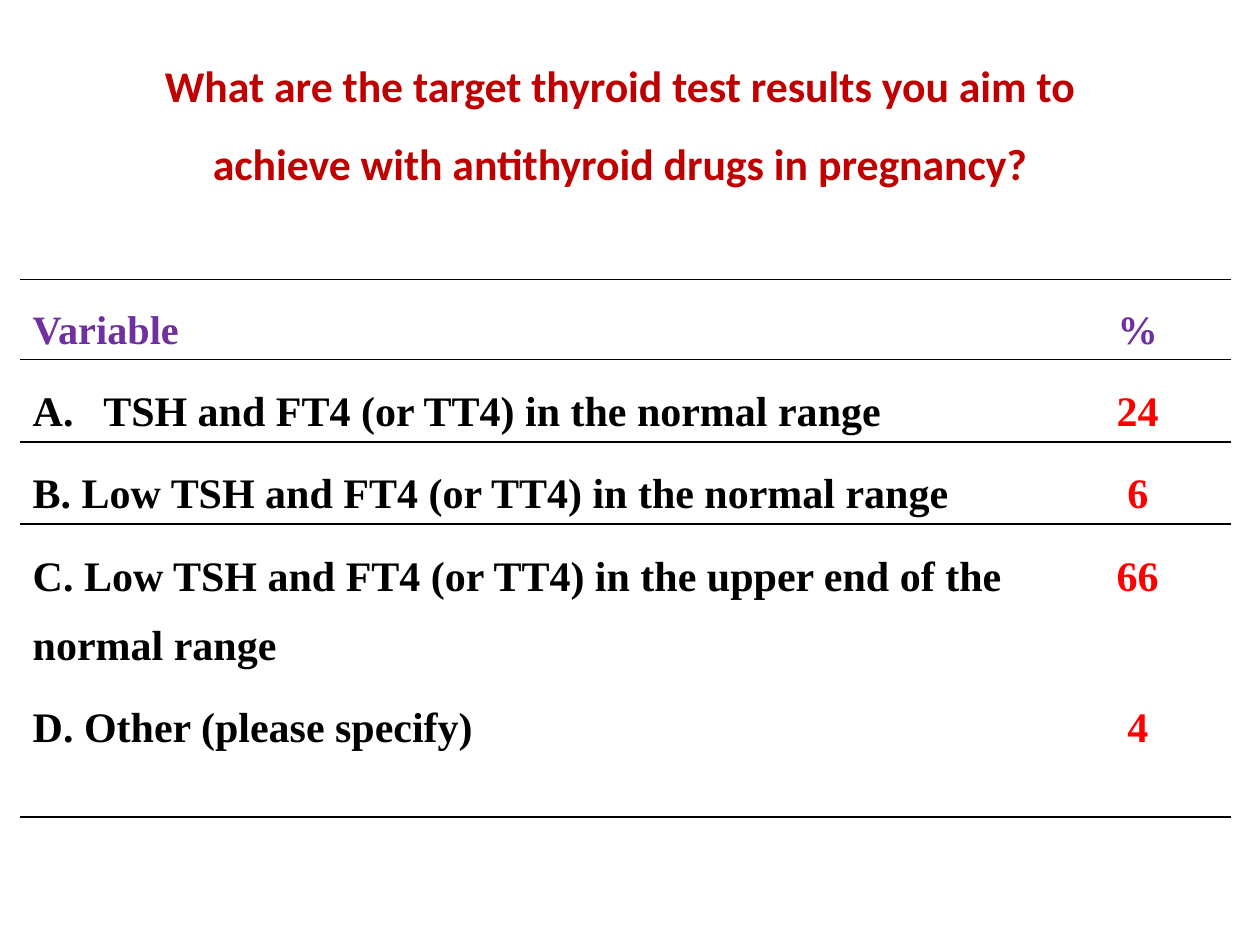
from lxml import etree
from pptx import Presentation
from pptx.dml.color import RGBColor
from pptx.enum.text import MSO_ANCHOR, PP_ALIGN
from pptx.oxml.ns import qn
from pptx.util import Inches, Pt

DARK_RED = RGBColor(0xC0, 0x00, 0x00)
PURPLE = RGBColor(0x70, 0x30, 0xA0)
RED = RGBColor(0xFF, 0x00, 0x00)
BLACK = RGBColor(0x00, 0x00, 0x00)
NO_GRID_STYLE = "{2D5ABB26-0587-4C30-8999-92F81FD0307C}"


def format_paragraph(p, font_name, size, color, align):
    p.alignment = align
    p.line_spacing = 1.5
    for r in p.runs:
        r.font.name = font_name
        r.font.size = Pt(size)
        r.font.bold = True
        r.font.color.rgb = color


def add_border(cell, tag):
    """Rule one side of a cell; tag is a:lnT or a:lnB."""
    ln = etree.SubElement(cell._tc.get_or_add_tcPr(), qn(tag), w=str(Pt(1)))
    fill = etree.SubElement(ln, qn("a:solidFill"))
    etree.SubElement(fill, qn("a:srgbClr"), val=str(BLACK))


prs = Presentation()
prs.slide_width, prs.slide_height = Inches(10), Inches(7.5)
s = prs.slides.add_slide(prs.slide_layouts[6])

# Answer table
rows = [
    ("Variable", "%"),
    ("TSH and FT4 (or TT4) in the normal range", "24"),
    ("B. Low TSH and FT4 (or TT4) in the normal range", "6"),
    ("C. Low TSH and FT4 (or TT4) in the upper end of the normal range", "66"),
    ("D. Other (please specify)", "4"),
]
row_heights = [0.61, 0.63, 0.63, 0.62, 1.12]
ruled_below = (0, 1, 4)

table = s.shapes.add_table(len(rows), 2, Inches(0.16), Inches(2.22),
                           Inches(9.61), Inches(sum(row_heights))).table
table._tbl.tblPr.find(qn("a:tableStyleId")).text = NO_GRID_STYLE
table.first_row = table.horz_banding = False
for column, width in zip(table.columns, (8.13, 1.48)):
    column.width = Inches(width)

for i, (texts, height) in enumerate(zip(rows, row_heights)):
    table.rows[i].height = Inches(height)
    for j, text in enumerate(texts):
        cell = table.cell(i, j)
        if i == 0 or i - 1 in ruled_below:
            add_border(cell, "a:lnT")
        if i in ruled_below:
            add_border(cell, "a:lnB")
        cell.fill.background()
        p = cell.text_frame.paragraphs[0]
        p.text = text
        color = PURPLE if i == 0 else (BLACK, RED)[j]
        format_paragraph(p, "Times New Roman", 23 if i == 0 else 24, color,
                         (PP_ALIGN.LEFT, PP_ALIGN.CENTER)[j])

# Answer A carries an automatic letter
p = table.cell(1, 0).text_frame.paragraphs[0]
pPr = p._p.get_or_add_pPr()
pPr.set("marL", str(Inches(0.56)))
pPr.set("indent", str(Inches(-0.56)))
etree.SubElement(pPr, qn("a:buFont"), typeface="+mj-lt")
etree.SubElement(pPr, qn("a:buAutoNum"), type="alphaUcPeriod")

# Question
title = s.shapes.add_textbox(Inches(0.67), Inches(0.17), Inches(8.5), Inches(1.42))
tf = title.text_frame
tf.word_wrap = True
tf.vertical_anchor = MSO_ANCHOR.MIDDLE
tf.text = ("What are the target thyroid test results you aim to achieve "
           "with antithyroid drugs in pregnancy?")
format_paragraph(tf.paragraphs[0], "Calibri", 25, DARK_RED, PP_ALIGN.CENTER)

prs.save("out.pptx")
